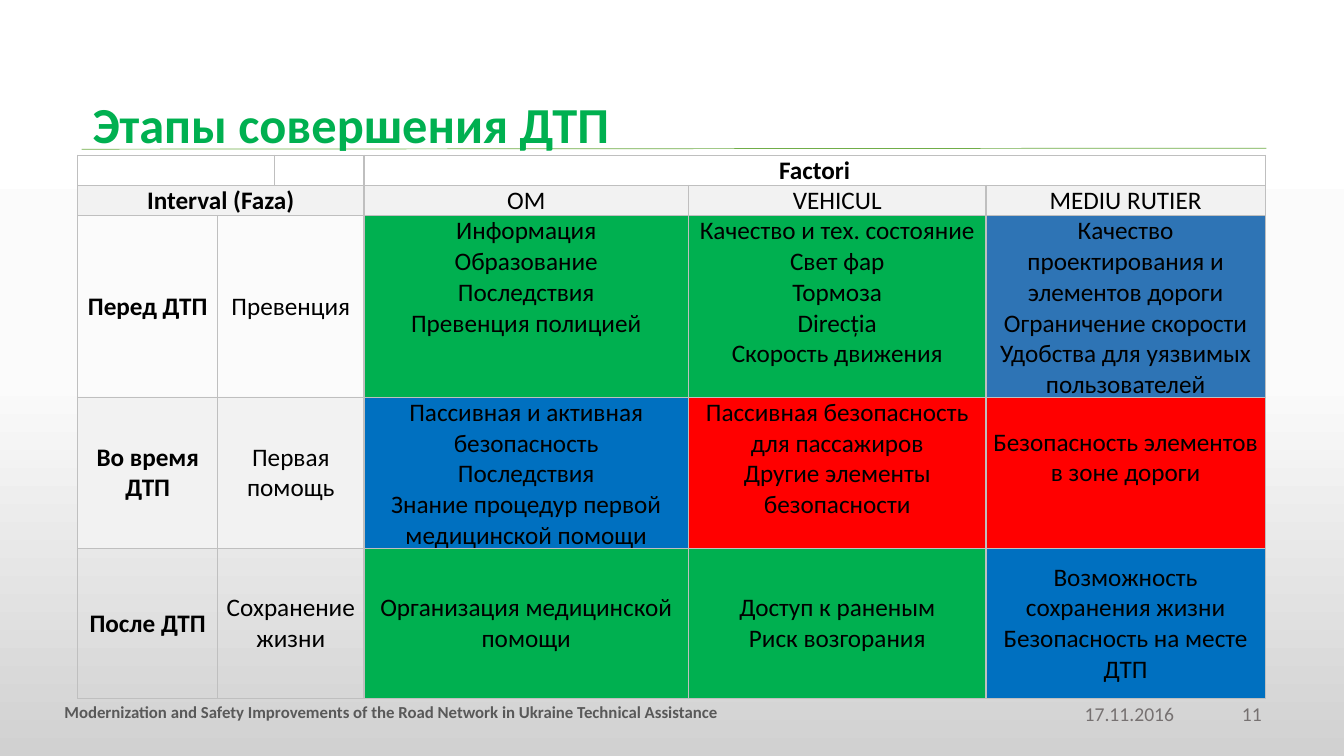
from copy import deepcopy

from lxml import etree
from pptx import Presentation
from pptx.dml.color import RGBColor
from pptx.enum.shapes import MSO_CONNECTOR
from pptx.enum.text import MSO_ANCHOR, PP_ALIGN
from pptx.oxml.ns import qn
from pptx.util import Inches, Pt

TOP, MIDDLE = MSO_ANCHOR.TOP, MSO_ANCHOR.MIDDLE
LEFT, CENTER = PP_ALIGN.LEFT, PP_ALIGN.CENTER
STRAIGHT = MSO_CONNECTOR.STRAIGHT

# Content
FONT = "Calibri"
GREEN, BLUE, STEEL, RED = "00B050", "0070C0", "2E74B5", "FF0000"
BAND, BORDER = "F2F2F2", "BFBFBF"
BACKGROUND = [(0, "FFFFFF"), (0.5, "FBFBFB"), (1, "D1D1D1")]

TITLE = "Этапы совершения ДТП"
FOOTERS = [  # left, width, text, format
    (10.66, 1.63, "17.11.2016", dict(size=14, color="767171")),
    (0.54, 9.93, "Modernization and Safety Improvements of the Road Network "
     "in Ukraine Technical Assistance", dict(size=12, color="595959", bold=True)),
    (12.22, 0.67, "11", dict(size=14, color="767171")),
]
COLUMNS = [1.39, 0.56, 0.89, 3.22, 2.95, 2.77]
ROWS = [0.25, 0.25, 1.49, 1.49, 1.49]
MERGES = [(0, 0, 1), (0, 3, 5), (1, 0, 2), (2, 1, 2), (3, 1, 2), (4, 1, 2)]
FACTORS = ["OM", "VEHICUL", "MEDIU RUTIER"]
PHASES = [  # phase, measure, band fill, factor cells (fill, anchor, lines)
    ("Перед ДТП", "Превенция", None, [
        (GREEN, TOP, ["Информация", "Образование", "Последствия",
                      "Превенция полицией"]),
        (GREEN, TOP, ["Качество и тех. состояние", "Свет фар", "Тормоза",
                      "Direcția", "Скорость движения"]),
        (STEEL, TOP, ["Качество проектирования и элементов дороги",
                      "Ограничение скорости",
                      "Удобства для уязвимых пользователей"]),
    ]),
    ("Во время ДТП", "Первая помощь", BAND, [
        (BLUE, TOP, ["Пассивная и активная безопасность", "Последствия",
                     "Знание процедур первой медицинской помощи"]),
        (RED, TOP, ["Пассивная безопасность для пассажиров",
                    "Другие элементы безопасности"]),
        (RED, MIDDLE, ["Безопасность элементов в зоне дороги"]),
    ]),
    ("После ДТП", "Сохранение жизни", None, [
        (GREEN, MIDDLE, ["Организация медицинской помощи"]),
        (GREEN, MIDDLE, ["Доступ к раненым", "Риск возгорания"]),
        (BLUE, MIDDLE, ["Возможность сохранения жизни",
                        "Безопасность на месте ДТП"]),
    ]),
]


def rgb(value):
    return RGBColor.from_string(value)


def write(frame, lines, size=18, color="000000", bold=False, align=LEFT, spacing=1.0):
    frame.word_wrap = True
    for index, line in enumerate(lines):
        para = frame.add_paragraph() if index else frame.paragraphs[0]
        para.alignment = align
        para.line_spacing = spacing
        span = para.add_run()
        span.text = line
        span.font.name = FONT
        span.font.size = Pt(size)
        span.font.bold = bold
        span.font.color.rgb = rgb(color)


def add_text(page, left, top, width, height, text, anchor=TOP, **style):
    box = page.shapes.add_textbox(*map(Inches, (left, top, width, height)))
    box.text_frame.vertical_anchor = anchor
    write(box.text_frame, [text], **style)


def set_background(page):
    fill = page.background.fill
    fill.gradient()
    fill.gradient_angle = 270
    stop_list = page.element.find(".//" + qn("a:gsLst"))
    stop_list.insert(1, deepcopy(stop_list[0]))
    for stop, (position, color) in zip(fill.gradient_stops, BACKGROUND):
        stop.position = position
        stop.color.rgb = rgb(color)


def format_cell(cell, fill):
    cell.margin_left = cell.margin_right = Inches(0.07)
    cell.margin_top = cell.margin_bottom = 0
    if fill:
        cell.fill.solid()
        cell.fill.fore_color.rgb = rgb(fill)
    else:
        cell.fill.background()
    properties = cell._tc.get_or_add_tcPr()
    for index, side in enumerate(("a:lnL", "a:lnR", "a:lnT", "a:lnB")):
        line = etree.Element(qn(side), w=str(Pt(1)))
        solid = etree.SubElement(line, qn("a:solidFill"))
        etree.SubElement(solid, qn("a:srgbClr"), val=BORDER)
        properties.insert(index, line)


def fill_cell(table, row, column, lines, anchor=TOP, bold=False):
    cell = table.cell(row, column)
    cell.vertical_anchor = anchor
    write(cell.text_frame, lines, bold=bold, align=CENTER)


def add_matrix(page):
    frame = page.shapes.add_table(len(ROWS), len(COLUMNS), Inches(0.77), Inches(1.54),
                                  Inches(sum(COLUMNS)), Inches(sum(ROWS)))
    table = frame.table
    table.first_row = table.horz_banding = False
    for column, width in zip(table.columns, COLUMNS):
        column.width = Inches(width)
    for row, height in zip(table.rows, ROWS):
        row.height = Inches(height)

    # Fills: label columns follow the band, factor columns their own colour
    fills = [[None] * 6, [BAND] * 6]
    fills += [[band] * 3 + [cell[0] for cell in cells] for _, _, band, cells in PHASES]
    for row, row_fills in enumerate(fills):
        for column, fill in enumerate(row_fills):
            format_cell(table.cell(row, column), fill)
    for row, first, last in MERGES:
        table.cell(row, first).merge(table.cell(row, last))

    # Headings
    fill_cell(table, 0, 3, ["Factori"], bold=True)
    fill_cell(table, 1, 0, ["Interval (Faza)"], bold=True)
    for column, factor in enumerate(FACTORS, 3):
        fill_cell(table, 1, column, [factor])

    # Phases
    for row, (phase, measure, _, cells) in enumerate(PHASES, 2):
        fill_cell(table, row, 0, [phase], MIDDLE, bold=True)
        fill_cell(table, row, 1, [measure], MIDDLE)
        for column, (_, anchor, lines) in enumerate(cells, 3):
            fill_cell(table, row, column, lines, anchor)
    table.cell(3, 5).margin_bottom = Inches(0.3)


def main():
    deck = Presentation()
    deck.slide_width, deck.slide_height = Inches(13.33), Inches(7.5)
    page = deck.slides.add_slide(deck.slide_layouts[6])
    set_background(page)

    # Rule and title
    rule = page.shapes.add_connector(
        STRAIGHT, Inches(0.81), Inches(1.48), Inches(12.56), Inches(1.47))
    rule.line.color.rgb = rgb("70AD47")
    rule.line.width = Pt(0.5)
    etree.SubElement(rule._element.spPr, qn("a:effectLst"))
    add_text(page, 0.82, 0.98, 11.75, 0.57, TITLE, anchor=MIDDLE,
             size=36, color=GREEN, bold=True, spacing=0.9)

    # Footer and table
    for left, width, text, style in FOOTERS:
        add_text(page, left, 6.91, width, 0.4, text, **style)
    add_matrix(page)
    deck.save("out.pptx")


if __name__ == "__main__":
    main()
